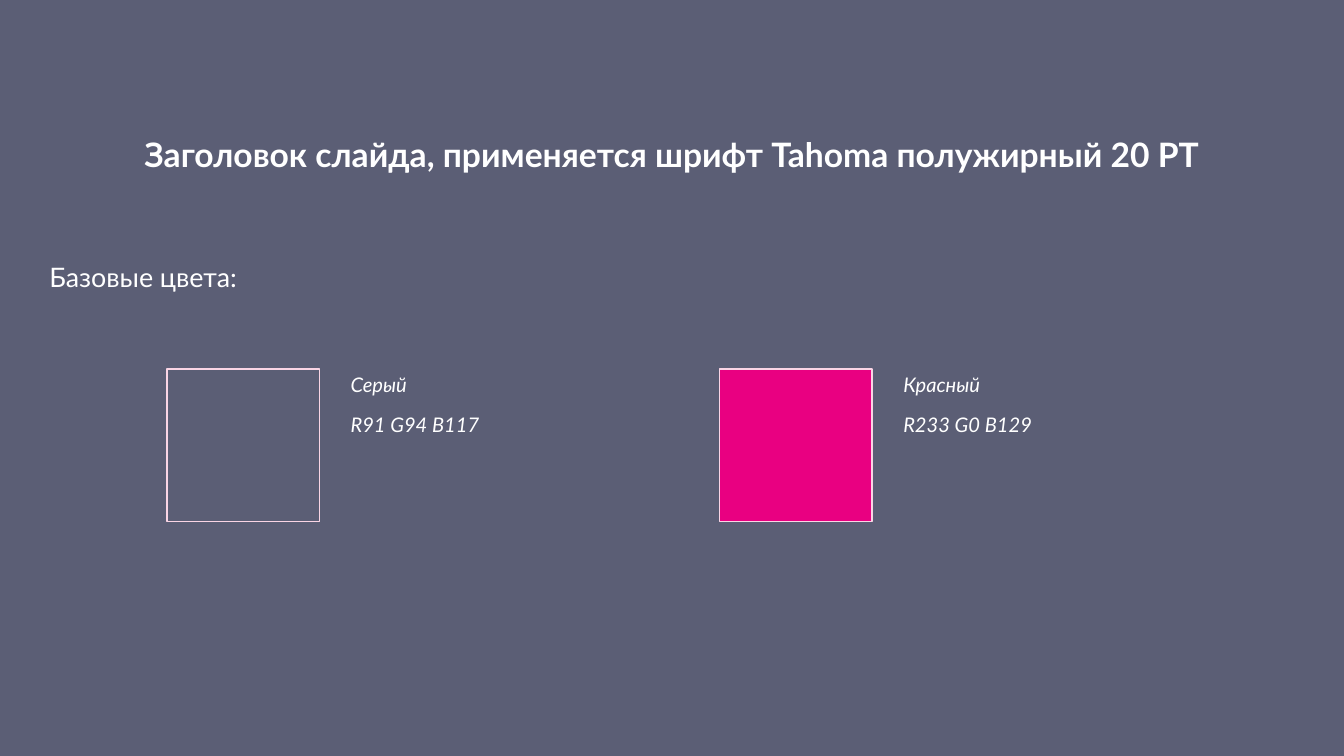
from dataclasses import dataclass

from pptx import Presentation
from pptx.dml.color import RGBColor
from pptx.enum.shapes import MSO_SHAPE
from pptx.enum.text import MSO_ANCHOR, MSO_AUTO_SIZE, PP_ALIGN
from pptx.slide import Slide
from pptx.text.text import TextFrame
from pptx.util import Pt


@dataclass(frozen=True)
class Theme:
    font: str = "Lato"
    grey: RGBColor = RGBColor(91, 94, 117)
    red: RGBColor = RGBColor(233, 0, 129)
    outline: RGBColor = RGBColor(250, 213, 229)
    text: RGBColor = RGBColor(255, 255, 255)
    title_size: float = 20
    body_size: float = 16
    label_size: float = 12
    line_spacing: float = 0.9
    paragraph_gap: float = 11.1


@dataclass(frozen=True)
class Swatch:
    name: str
    color: RGBColor

    @property
    def code(self) -> str:
        red, green, blue = self.color
        return f"R{red} G{green} B{blue}"


THEME = Theme()
SWATCHES = [Swatch("Серый", THEME.grey), Swatch("Красный", THEME.red)]

# Swatch grid, in points
SWATCH_LEFT, SWATCH_TOP, SWATCH_SIDE = 99.4, 219.6, 90.7
SWATCH_PITCH = 329
LABEL_OFFSET, LABEL_WIDTH = 102.2, 198.7


def write(tf: TextFrame, lines: list[str], size: float, bold: bool = False,
          italic: bool = False, align: PP_ALIGN = PP_ALIGN.LEFT) -> None:
    tf.word_wrap = True
    tf.auto_size = MSO_AUTO_SIZE.NONE
    for i, line in enumerate(lines):
        p = tf.add_paragraph() if i else tf.paragraphs[0]
        p.alignment = align
        p.line_spacing = THEME.line_spacing
        p.space_before = Pt(THEME.paragraph_gap if i else 0)
        r = p.add_run()
        r.text = line
        r.font.name = THEME.font
        r.font.size = Pt(size)
        r.font.bold = bold
        r.font.italic = italic
        r.font.color.rgb = THEME.text


def add_title(s: Slide, text: str) -> None:
    sp = s.shapes.title
    sp.left, sp.top, sp.width, sp.height = Pt(0), Pt(72), Pt(800), Pt(42.5)
    tf = sp.text_frame
    tf.vertical_anchor = MSO_ANCHOR.MIDDLE
    tf.margin_left = tf.margin_right = tf.margin_top = tf.margin_bottom = Pt(3.6)
    write(tf, [text], THEME.title_size, bold=True, align=PP_ALIGN.CENTER)


def add_swatch(s: Slide, swatch: Swatch, left: float) -> None:
    sp = s.shapes.add_shape(MSO_SHAPE.RECTANGLE, Pt(left), Pt(SWATCH_TOP),
                            Pt(SWATCH_SIDE), Pt(SWATCH_SIDE))
    sp.shadow.inherit = False
    sp.fill.solid()
    sp.fill.fore_color.rgb = swatch.color
    sp.line.color.rgb = THEME.outline
    sp.line.width = Pt(0.75)
    label = s.shapes.add_textbox(Pt(left + LABEL_OFFSET), Pt(SWATCH_TOP),
                                 Pt(LABEL_WIDTH), Pt(SWATCH_SIDE))
    write(label.text_frame, [swatch.name, swatch.code], THEME.label_size, italic=True)


def main() -> None:
    prs = Presentation()
    prs.slide_width, prs.slide_height = Pt(800), Pt(450)
    s = prs.slides.add_slide(prs.slide_layouts[5])

    # Background
    s.background.fill.solid()
    s.background.fill.fore_color.rgb = THEME.grey

    # Title and subheading
    add_title(s, "Заголовок слайда, применяется шрифт Tahoma полужирный 20 PT")
    heading = s.shapes.add_textbox(Pt(22.3), Pt(154), Pt(756), Pt(35.3))
    write(heading.text_frame, ["Базовые цвета:"], THEME.body_size)

    # Colour swatches with labels
    for i, swatch in enumerate(SWATCHES):
        add_swatch(s, swatch, SWATCH_LEFT + i * SWATCH_PITCH)

    prs.save("out.pptx")


if __name__ == "__main__":
    main()
